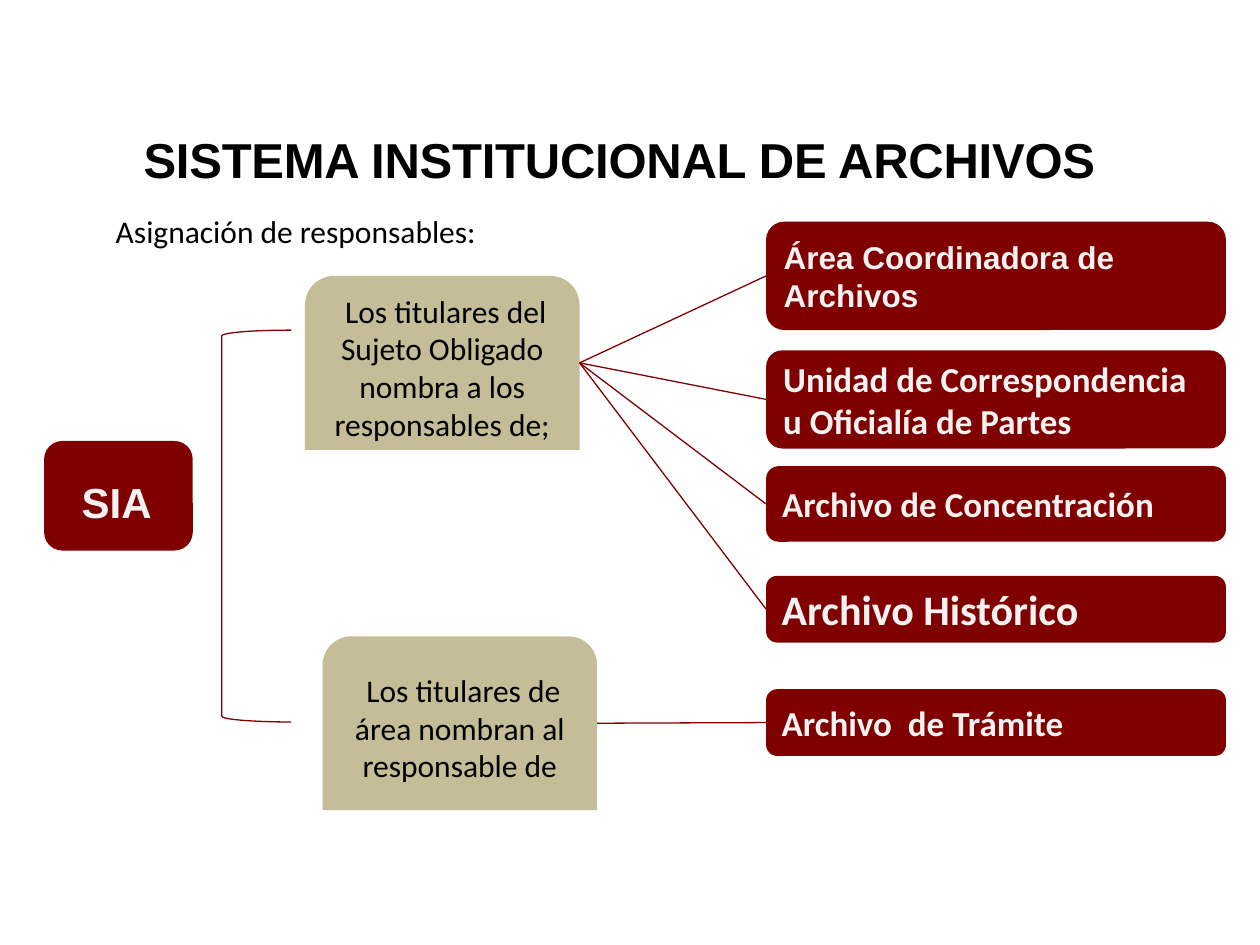
import pptx
import pptx.dml.color
import pptx.enum.shapes
import pptx.enum.text
import pptx.oxml.ns
import pptx.util
from lxml import etree

RGBColor = pptx.dml.color.RGBColor
MAROON = RGBColor(0x80, 0x00, 0x00)
TAN = RGBColor(0xC4, 0xBD, 0x97)
PALE = RGBColor(0xF2, 0xF2, 0xF2)
BLACK = RGBColor(0x00, 0x00, 0x00)
SHAPE = pptx.enum.shapes.MSO_SHAPE
ALIGN = pptx.enum.text.PP_ALIGN
ANCHOR = pptx.enum.text.MSO_ANCHOR
WIDTH = pptx.util.Inches(10)
HEIGHT = pptx.util.Inches(7.5)
COL = WIDTH / 100
ROW = HEIGHT / 75

LEAVES = [
    ("Área Coordinadora de Archivos", 0, 8.6, 18, "Arial"),
    ("Unidad de Correspondencia u Oficialía de Partes", 10.2, 7.8, 20, "Calibri"),
    ("Archivo de Concentración", 19.4, 6, 20, "Calibri"),
    ("Archivo Histórico", 28.1, 5.3, 24, "Calibri"),
    ("Archivo  de Trámite", 37.1, 5.3, 20, "Calibri"),
]


def grid(left, top, width, height):
    return [round(n) for n in (left * COL, top * ROW, width * COL, height * ROW)]


def write(shape, text, size=18, font="Calibri", color=BLACK, bold=False,
          align=ALIGN.LEFT, anchor=ANCHOR.MIDDLE):
    frame = shape.text_frame
    frame.word_wrap = True
    frame.auto_size = pptx.enum.text.MSO_AUTO_SIZE.NONE
    frame.vertical_anchor = anchor
    para = frame.paragraphs[0]
    para.alignment = align
    run = para.add_run()
    run.text = text
    run.font.size = pptx.util.Pt(size)
    run.font.name = font
    run.font.bold = bold
    run.font.color.rgb = color
    return frame


def block(slide, kind, box, fill):
    shape = slide.shapes.add_shape(kind, *grid(*box))
    shape.shadow.inherit = False
    shape.fill.solid()
    shape.fill.fore_color.rgb = fill
    shape.line.fill.background()
    return shape


def head(slide, box):
    left, top, width, height = box
    title = slide.shapes.title
    title.left, title.top, title.width, title.height = grid(left, top, width, height)
    frame = write(title, "SISTEMA INSTITUCIONAL DE ARCHIVOS", size=28, font="Arial",
                  bold=True, align=ALIGN.CENTER, anchor=ANCHOR.TOP)
    frame.margin_left = frame.margin_right = frame.margin_bottom = 0
    frame.margin_top = pptx.util.Inches(0.01)
    frame.paragraphs[0].runs[0].font._element.set("spc", "-10")
    label = slide.shapes.add_textbox(*grid(left + 0.4, top + 6.1, width + 2.5, 4))
    write(label, "Asignación de responsables:", align=ALIGN.JUSTIFY, anchor=ANCHOR.TOP)


def root(slide, box):
    left, top, width, height = box
    block(slide, SHAPE.ROUNDED_RECTANGLE, box, MAROON)
    label = slide.shapes.add_textbox(*grid(left + 2, top + 2.3, 20.1, 5))
    write(label, "SIA", size=24, font="Arial", color=PALE, bold=True, anchor=ANCHOR.TOP)


def brace(slide, box):
    shape = slide.shapes.add_shape(SHAPE.LEFT_BRACKET, *grid(*box))
    shape.shadow.inherit = False
    shape.fill.background()
    shape.line.color.rgb = MAROON
    shape.line.width = pptx.util.Pt(0.75)


def holder(slide, box, text):
    shape = block(slide, SHAPE.ROUND_2_SAME_RECTANGLE, box, TAN)
    write(shape, text, align=ALIGN.CENTER)
    return shape


def leaves(slide, box):
    left, top, width, height = box
    shapes = []
    for text, drop, tall, size, font in LEAVES:
        shape = block(slide, SHAPE.ROUNDED_RECTANGLE, (left, top + drop, width, tall), MAROON)
        write(shape, text, size=size, font=font, color=PALE, bold=True)
        shapes.append(shape)
    return shapes


def link(slide, start, end):
    line = slide.shapes.add_connector(
        pptx.enum.shapes.MSO_CONNECTOR.STRAIGHT,
        start.left + start.width, start.top + start.height // 2,
        end.left, end.top + end.height // 2)
    line.end_connect(end, 1)
    line.line.color.rgb = MAROON
    line.line.width = pptx.util.Pt(0.75)
    etree.SubElement(line._element.spPr, pptx.oxml.ns.qn("a:effectLst"))


def main():
    deck = pptx.Presentation()
    deck.slide_width, deck.slide_height = WIDTH, HEIGHT
    slide = deck.slides.add_slide(deck.slide_layouts[5])
    head(slide, (7.8, 10.2, 82.7, 4.9))
    root(slide, (3.5, 35, 11.8, 8.7))
    brace(slide, (17.6, 26.2, 5.5, 31.1))
    owner = holder(slide, (24.2, 21.9, 21.8, 13.8),
                   " Los titulares del Sujeto Obligado nombra a los responsables de;")
    chief = holder(slide, (25.6, 50.5, 21.8, 13.8),
                   " Los titulares de área nombran al responsable de")
    ends = leaves(slide, (60.8, 17.6, 36.5, 42.4))
    for end in ends[:-1]:
        link(slide, owner, end)
    link(slide, chief, ends[-1])
    deck.save("out.pptx")


if __name__ == "__main__":
    main()
